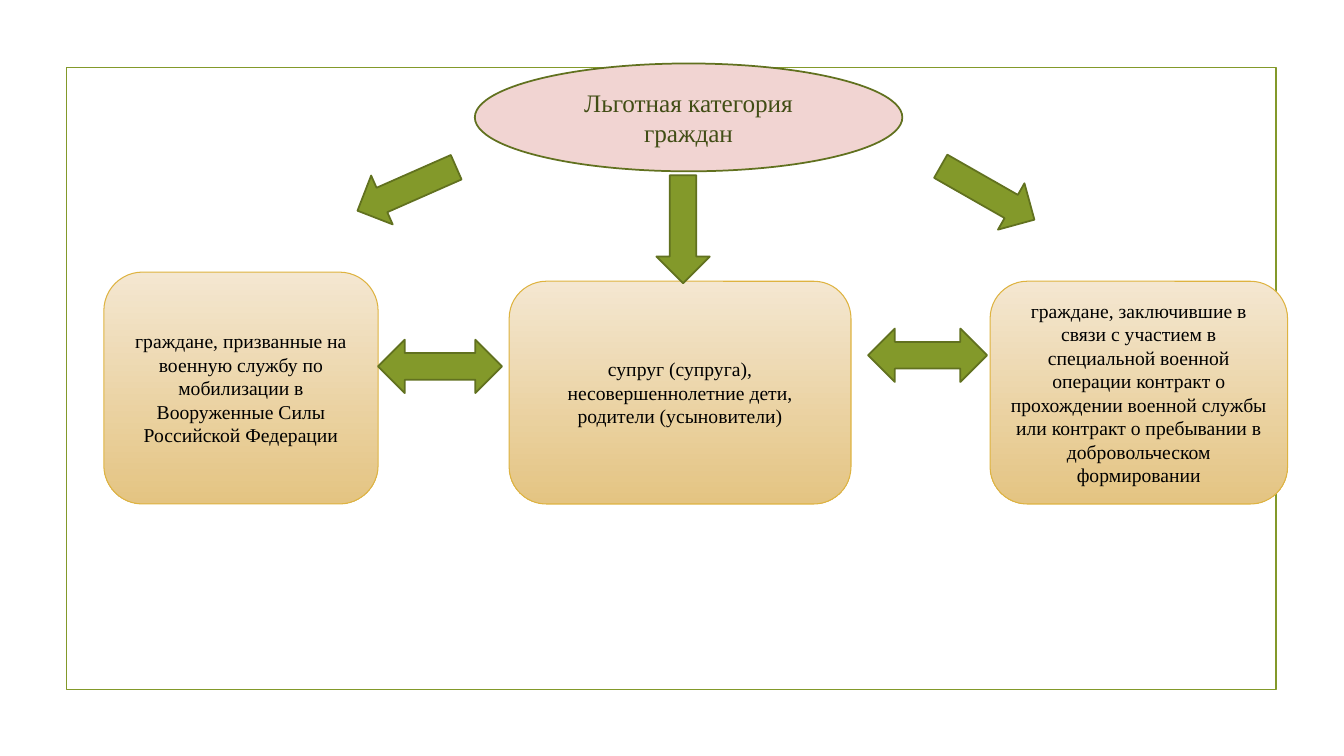
from pptx import Presentation
from pptx.dml.color import RGBColor
from pptx.enum.shapes import MSO_SHAPE as Shape
from pptx.enum.text import MSO_ANCHOR as Anchor, PP_ALIGN as Align
from pptx.util import Emu, Pt

EMU_PER_PX = 9144  # 100 px to the inch
OLIVE, DARK_OLIVE, TITLE_GREEN = "83992A", "61711F", "414D15"
PINK, GOLD, BLACK = "F1D4D2", "DEB340", "000000"
SAND = ("F4E7D1", "E4C482")
FONT = "Times New Roman"

CATEGORIES = [
    ((103, 270, 272, 230),
     "граждане, призванные на военную службу по мобилизации в "
     "Вооруженные Силы Российской Федерации"),
    ((505, 279, 339, 221),
     "супруг (супруга), несовершеннолетние дети, родители (усыновители)"),
    ((982, 279, 295, 221),
     "граждане, заключившие в связи с участием в специальной военной "
     "операции контракт о прохождении военной службы или контракт о "
     "пребывании в добровольческом формировании"),
]
ARROWS = [
    (Shape.RIGHT_ARROW, (350, 161, 107, 53), 156.2),
    (Shape.RIGHT_ARROW, (926, 165, 107, 53), 29.7),
    (Shape.DOWN_ARROW, (651, 174, 53, 107), 0),
    (Shape.LEFT_RIGHT_ARROW, (375, 337, 123, 53), 0),
    (Shape.LEFT_RIGHT_ARROW, (861, 326, 118, 53), 0),
]


def px(length):
    return Emu(length * EMU_PER_PX)


def color(hex_code):
    return RGBColor.from_string(hex_code)


def add_figure(slide, kind, box, line_color, line_width, fill=None):
    """Add a shape; fill is None, one colour or a top and bottom colour."""
    figure = slide.shapes.add_shape(kind, *map(px, box))
    figure.shadow.inherit = False
    figure.line.color.rgb = color(line_color)
    figure.line.width = Pt(line_width)
    if fill is None:
        figure.fill.background()
    elif isinstance(fill, str):
        figure.fill.solid()
        figure.fill.fore_color.rgb = color(fill)
    else:
        figure.fill.gradient()
        figure.fill.gradient_angle = 270
        for stop, shade in zip(figure.fill.gradient_stops, fill):
            stop.color.rgb = color(shade)
    return figure


def write_centred(figure, wording, size, text_color):
    frame = figure.text_frame
    frame.word_wrap = True
    frame.vertical_anchor = Anchor.MIDDLE
    paragraph = frame.paragraphs[0]
    paragraph.alignment = Align.CENTER
    run = paragraph.add_run()
    run.text = wording
    for attribute, value in {"name": FONT, "size": Pt(size)}.items():
        setattr(run.font, attribute, value)
    run.font.color.rgb = color(text_color)


def add_heading(slide, box):
    heading = add_figure(slide, Shape.OVAL, box, DARK_OLIVE, 1.25, PINK)
    write_centred(heading, "Льготная категория граждан", 18, TITLE_GREEN)


def add_category(slide, box, wording):
    category = add_figure(slide, Shape.ROUNDED_RECTANGLE, box, GOLD, 0.75, SAND)
    write_centred(category, wording, 14, BLACK)


def add_arrow(slide, kind, box, rotation):
    arrow = add_figure(slide, kind, box, DARK_OLIVE, 1.25, OLIVE)
    arrow.rotation = rotation


def main():
    deck = Presentation()
    deck.slide_width, deck.slide_height = px(1333), px(750)
    slide = deck.slides.add_slide(deck.slide_layouts[6])
    add_figure(slide, Shape.RECTANGLE, (66, 67, 1200, 617), OLIVE, 1.25)
    add_heading(slide, (471, 63, 424, 107))
    for box, wording in CATEGORIES:
        add_category(slide, box, wording)
    for kind, box, rotation in ARROWS:
        add_arrow(slide, kind, box, rotation)
    deck.save("out.pptx")


if __name__ == "__main__":
    main()
